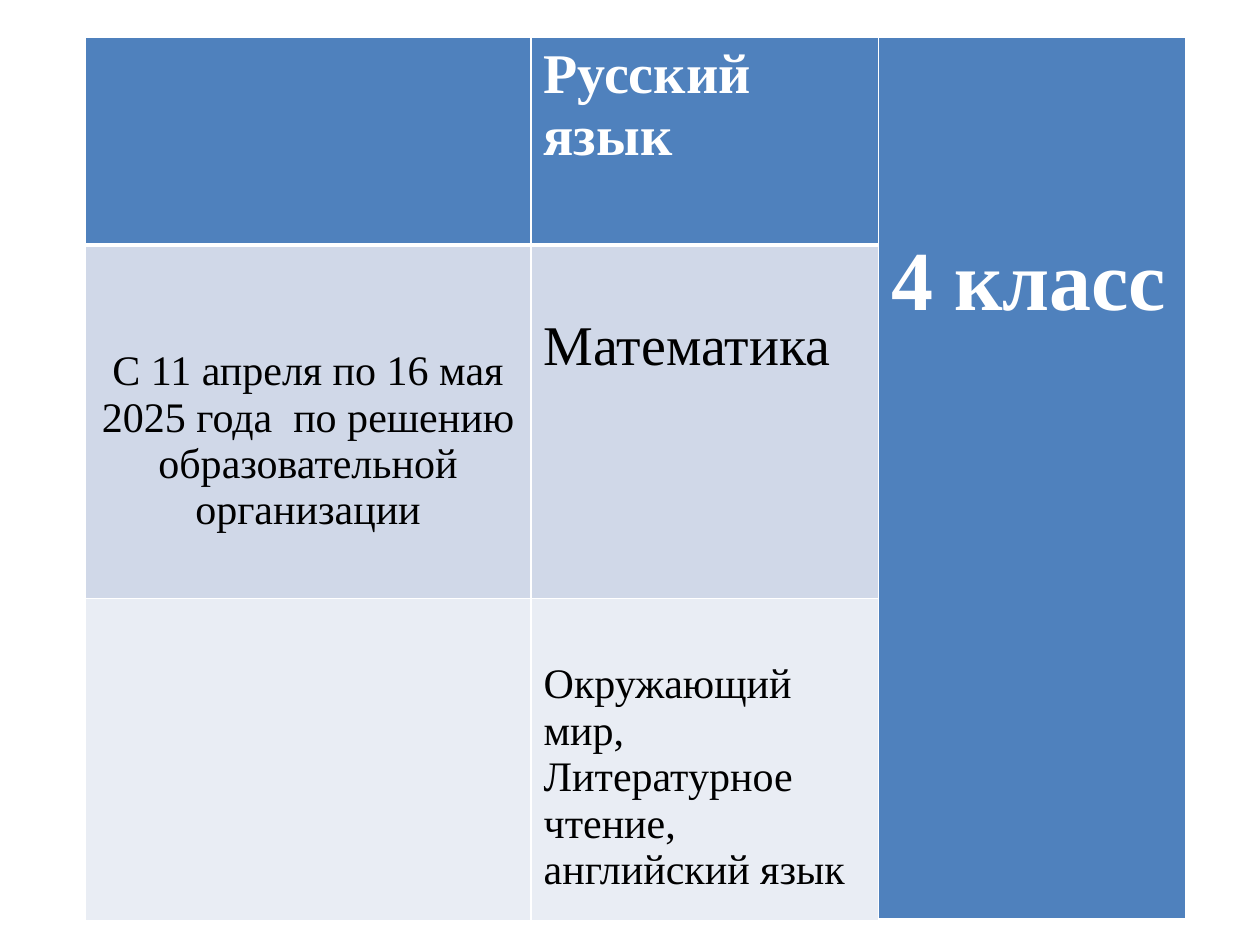
from dataclasses import dataclass

from pptx import Presentation
from pptx.dml.color import RGBColor
from pptx.enum.text import PP_ALIGN
from pptx.oxml.ns import qn
from pptx.util import Pt
from lxml import etree

LEFT, MID = PP_ALIGN.LEFT, PP_ALIGN.CENTER


@dataclass(frozen=True)
class Theme:
    font: str = "Times New Roman"
    head: str = "4F81BD"
    band: str = "D0D8E8"
    pale: str = "E9EDF4"
    white: str = "FFFFFF"
    black: str = "000000"
    grade: int = 48
    large: int = 32
    small: int = 24
    thin: int = 1
    thick: int = 3


def write(cell, text, font, size, color, bold=False, align=LEFT, top=3.6):
    cell.margin_top = Pt(top)
    para = cell.text_frame.paragraphs[0]
    para.alignment = align
    run = para.add_run()
    run.text = text
    run.font.name = font
    run.font.size = Pt(size)
    run.font.bold = bold
    run.font.color.rgb = RGBColor.from_string(color)


class Deck:
    def __init__(self, theme, wide, high):
        self.theme = theme
        self.file = Presentation()
        self.file.slide_width = Pt(wide)
        self.file.slide_height = Pt(high)
        self.slide = self.file.slides.add_slide(self.file.slide_layouts[6])

    def table(self, left, top, cols, rows):
        frame = self.slide.shapes.add_table(
            len(rows), len(cols), Pt(left), Pt(top), Pt(sum(cols)), Pt(sum(rows))
        )
        grid = frame.table
        for col, wide in zip(grid.columns, cols):
            col.width = Pt(wide)
        for row, high in zip(grid.rows, rows):
            row.height = Pt(high)
        return grid

    def border(self, cell, **sides):
        props = cell._tc.get_or_add_tcPr()
        for side in "LRTB":
            size = sides.get(side, self.theme.thin)
            line = etree.SubElement(props, qn(f"a:ln{side}"), w=str(Pt(size)))
            fill = etree.SubElement(line, qn("a:solidFill"))
            etree.SubElement(fill, qn("a:srgbClr"), val=self.theme.white)

    def paint(self, cell, color):
        cell.fill.solid()
        cell.fill.fore_color.rgb = RGBColor.from_string(color)

    def text(self, cell, words, size, **form):
        form.setdefault("color", self.theme.black)
        write(cell, words, self.theme.font, size, **form)


def main():
    look = Theme()
    deck = Deck(look, 720, 540)
    grid = deck.table(48.5, 21, cols=[255, 198.5, 175.5], rows=[119, 202, 184])
    grid.cell(0, 2).merge(grid.cell(2, 2))

    fills = [look.head, look.band, look.pale]
    edges = [{"B": look.thick}, {"T": look.thick}, {}]
    for row, (fill, edge) in enumerate(zip(fills, edges)):
        for col in range(3):
            cell = grid.cell(row, col)
            deck.border(cell, **edge)
            deck.paint(cell, look.head if col == 2 else fill)

    head = {"color": look.white, "bold": True}
    deck.text(grid.cell(0, 1), "Русский язык", look.large, **head)
    deck.text(grid.cell(0, 2), "4 класс", look.grade, top=114, **head)
    deck.text(
        grid.cell(1, 0),
        "С 11 апреля по 16 мая 2025 года  по решению образовательной организации",
        look.small, align=MID, top=59,
    )
    deck.text(grid.cell(1, 1), "Математика", look.large, top=40)
    deck.text(
        grid.cell(2, 1),
        "Окружающий мир, Литературное чтение, английский язык",
        look.small, top=36,
    )
    deck.file.save("out.pptx")


if __name__ == "__main__":
    main()
